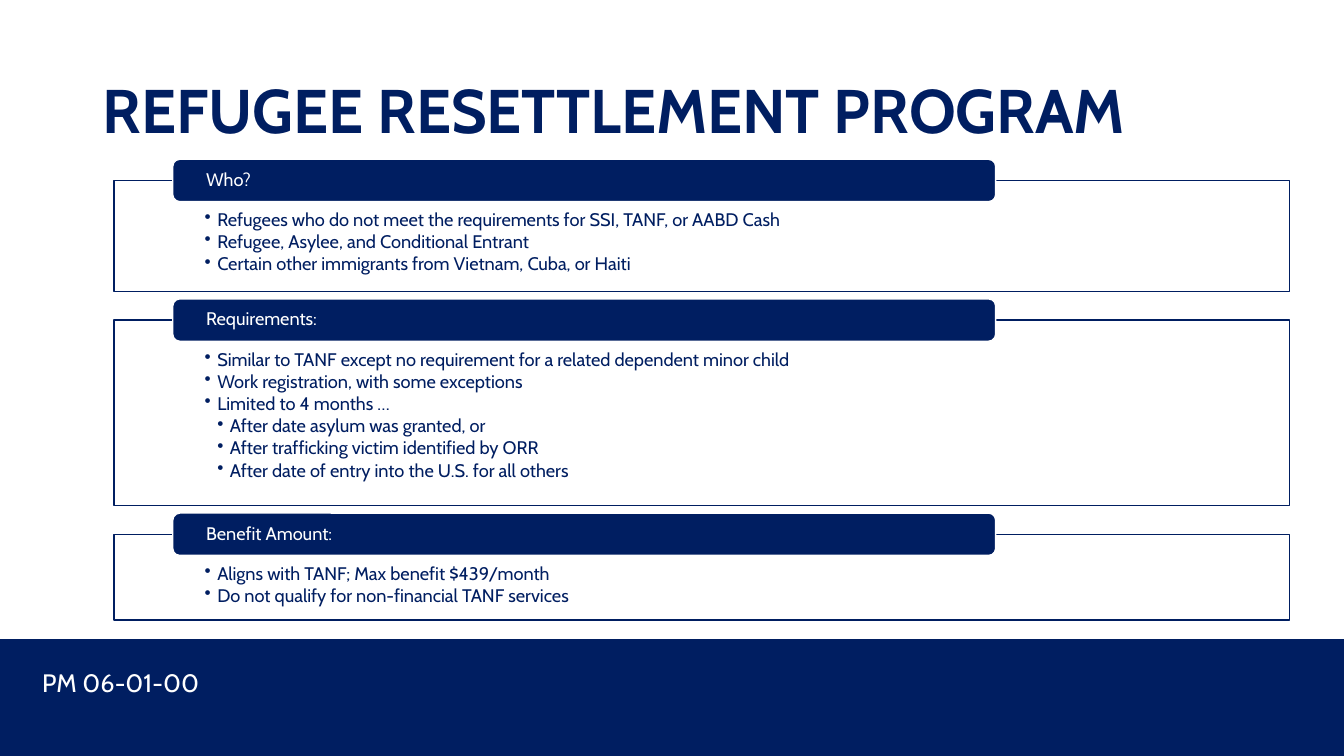
from dataclasses import dataclass

from lxml.etree import SubElement
from pptx import Presentation
from pptx.dml.color import RGBColor
from pptx.enum.shapes import MSO_SHAPE
from pptx.enum.text import MSO_ANCHOR, PP_ALIGN
from pptx.oxml.ns import qn
from pptx.util import Emu, Inches, Pt


@dataclass(frozen=True)
class Theme:
    font: str = "Cabin"
    navy: RGBColor = RGBColor(0x00, 0x1E, 0x61)
    white: RGBColor = RGBColor(0xFF, 0xFF, 0xFF)
    title_size: int = 44
    footer_size: int = 18
    body_size: int = 13
    line_spacing: float = 0.9
    bullet_gap: float = 1.8
    bullet_indent: float = 0.125
    panel_opacity: int = 90


@dataclass(frozen=True)
class Box:
    """A region in percent of the slide's width and height."""
    left: float
    top: float
    width: float
    height: float

    def place(self):
        return (Emu(int(SLIDE_WIDTH * self.left / 100)),
                Emu(int(SLIDE_HEIGHT * self.top / 100)),
                Emu(int(SLIDE_WIDTH * self.width / 100)),
                Emu(int(SLIDE_HEIGHT * self.height / 100)))


THEME = Theme()
SLIDE_WIDTH, SLIDE_HEIGHT = Inches(13.33), Inches(7.5)

TITLE_BOX = Box(6.9, 5.33, 86.27, 19.33)
FOOTER_BOX = Box(0, 84.53, 100, 15.47)
PANELS_BOX = Box(8.48, 23.87, 87.47, 58.13)
PANEL_GAP = 3.8
TAB_HEIGHT = 5.6

# Heading, share of the slide's height, bullets as (indent level, text)
SECTIONS = [
    ("Who?", 14.67, [
        (1, "Refugees who do not meet the requirements for SSI, TANF, or AABD Cash"),
        (1, "Refugee, Asylee, and Conditional Entrant"),
        (1, "Certain other immigrants from Vietnam, Cuba, or Haiti"),
    ]),
    ("Requirements:", 24.53, [
        (1, "Similar to TANF except no requirement for a related dependent minor child"),
        (1, "Work registration, with some exceptions"),
        (1, "Limited to 4 months …"),
        (2, "After date asylum was granted, or"),
        (2, "After trafficking victim identified by ORR"),
        (2, "After date of entry into the U.S. for all others"),
    ]),
    ("Benefit Amount:", 11.33, [
        (1, "Aligns with TANF; Max benefit $439/month"),
        (1, "Do not qualify for non-financial TANF services"),
    ]),
]


def add_block(slide, kind, box, fill, line=None):
    block = slide.shapes.add_shape(kind, *box.place())
    block.shadow.inherit = False
    block.fill.solid()
    block.fill.fore_color.rgb = fill
    if line is None:
        block.line.fill.background()
    else:
        block.line.color.rgb = line
        block.line.width = Pt(1)
    return block


def set_frame(frame, anchor, margins=(0.1, 0.05, 0.1, 0.05)):
    frame.word_wrap = True
    frame.vertical_anchor = anchor
    (frame.margin_left, frame.margin_top,
     frame.margin_right, frame.margin_bottom) = map(Inches, margins)


def style_paragraph(paragraph, size, color, bold=False, spacing=THEME.line_spacing):
    paragraph.alignment = PP_ALIGN.LEFT
    paragraph.line_spacing = spacing
    for run in paragraph.runs:
        run.font.name = THEME.font
        run.font.size = Pt(size)
        run.font.bold = bold
        run.font.color.rgb = color


def add_bullet(paragraph, level):
    indent = Inches(THEME.bullet_indent)
    paragraph.level = level
    properties = paragraph._p.get_or_add_pPr()
    properties.set("marL", str(indent * level))
    properties.set("indent", str(-indent))
    SubElement(properties, qn("a:buChar")).set("char", "•")


def add_title(slide, box, text):
    frame = slide.shapes.add_textbox(*box.place()).text_frame
    set_frame(frame, MSO_ANCHOR.MIDDLE)
    frame.text = text
    style_paragraph(frame.paragraphs[0], THEME.title_size, THEME.navy, bold=True)


def add_footer(slide, box, text):
    add_block(slide, MSO_SHAPE.RECTANGLE, box, THEME.navy)
    label = Box(box.left + 2.4, box.top + box.height * 0.2,
                box.width / 2, box.height * 0.35)
    frame = slide.shapes.add_textbox(*label.place()).text_frame
    set_frame(frame, MSO_ANCHOR.TOP)
    frame.text = text
    style_paragraph(frame.paragraphs[0], THEME.footer_size, THEME.white, spacing=1.0)


def add_section(slide, box, heading, bullets):
    # Outlined panel with its bullets
    panel = add_block(slide, MSO_SHAPE.RECTANGLE, box, THEME.white, THEME.navy)
    color = panel.fill._xPr.find(qn("a:solidFill"))[0]
    SubElement(color, qn("a:alpha")).set("val", str(THEME.panel_opacity * 1000))
    frame = panel.text_frame
    set_frame(frame, MSO_ANCHOR.TOP, (0.9, 0.3, 0.9, 0.1))
    frame.text = "\n".join(text for _, text in bullets)
    for paragraph, (level, _) in zip(frame.paragraphs, bullets):
        add_bullet(paragraph, level)
        style_paragraph(paragraph, THEME.body_size, THEME.navy)
        paragraph.space_after = Pt(THEME.bullet_gap)

    # Heading tab centred on the panel's top edge
    tab_box = Box(box.left + box.width * 0.05, box.top - TAB_HEIGHT / 2,
                  box.width * 0.7, TAB_HEIGHT)
    tab = add_block(slide, MSO_SHAPE.ROUNDED_RECTANGLE, tab_box, THEME.navy, THEME.white)
    set_frame(tab.text_frame, MSO_ANCHOR.MIDDLE, (0.31, 0, 0.31, 0))
    tab.text_frame.text = heading
    style_paragraph(tab.text_frame.paragraphs[0], THEME.body_size, THEME.white)


def add_sections(slide, box, sections):
    top = box.top
    for heading, height, bullets in sections:
        add_section(slide, Box(box.left, top, box.width, height), heading, bullets)
        top += height + PANEL_GAP


def main():
    presentation = Presentation()
    presentation.slide_width, presentation.slide_height = SLIDE_WIDTH, SLIDE_HEIGHT
    slide = presentation.slides.add_slide(presentation.slide_layouts[6])
    add_title(slide, TITLE_BOX, "REFUGEE RESETTLEMENT PROGRAM")
    add_sections(slide, PANELS_BOX, SECTIONS)
    add_footer(slide, FOOTER_BOX, "PM 06-01-00")
    presentation.save("out.pptx")


if __name__ == "__main__":
    main()
